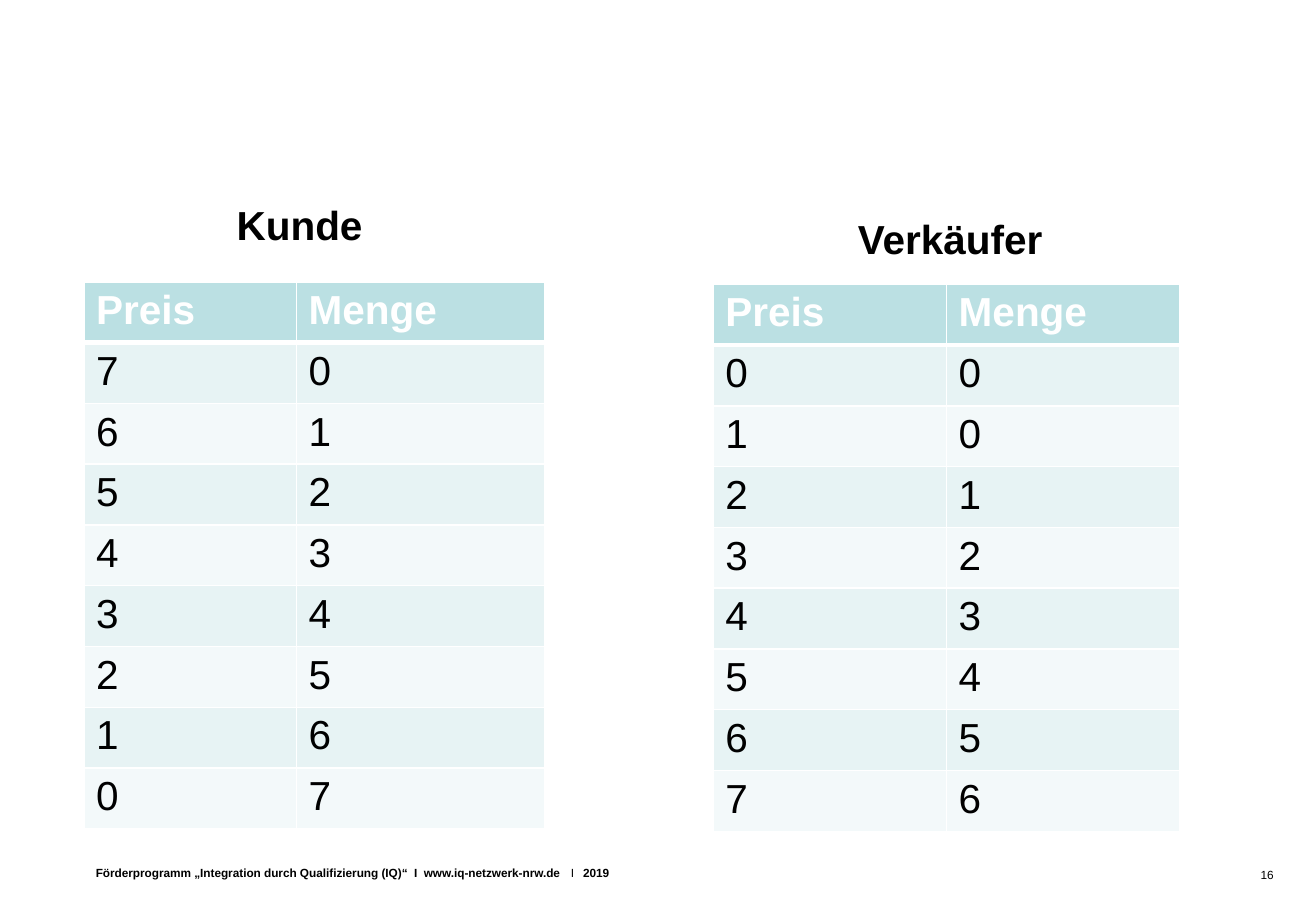
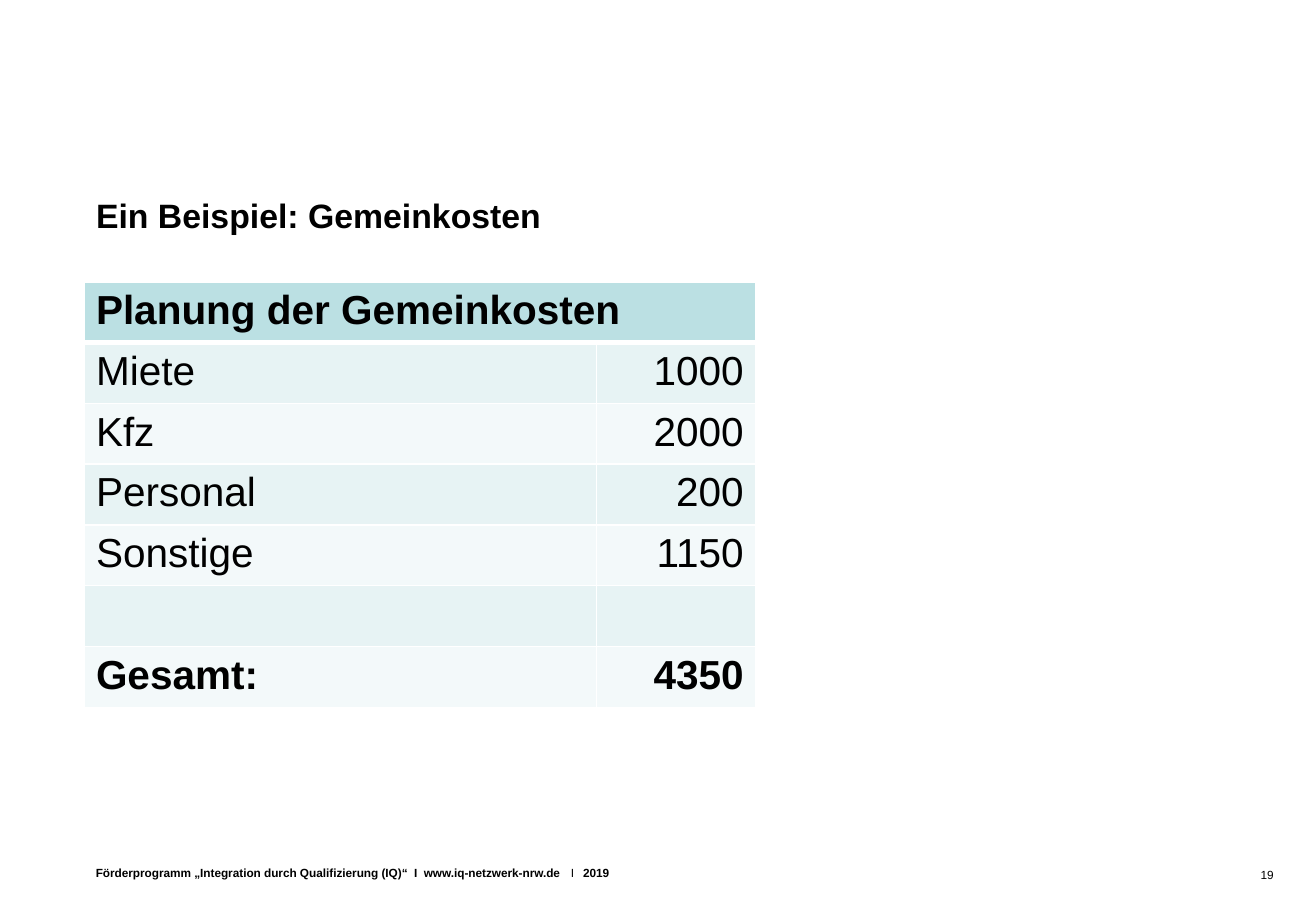
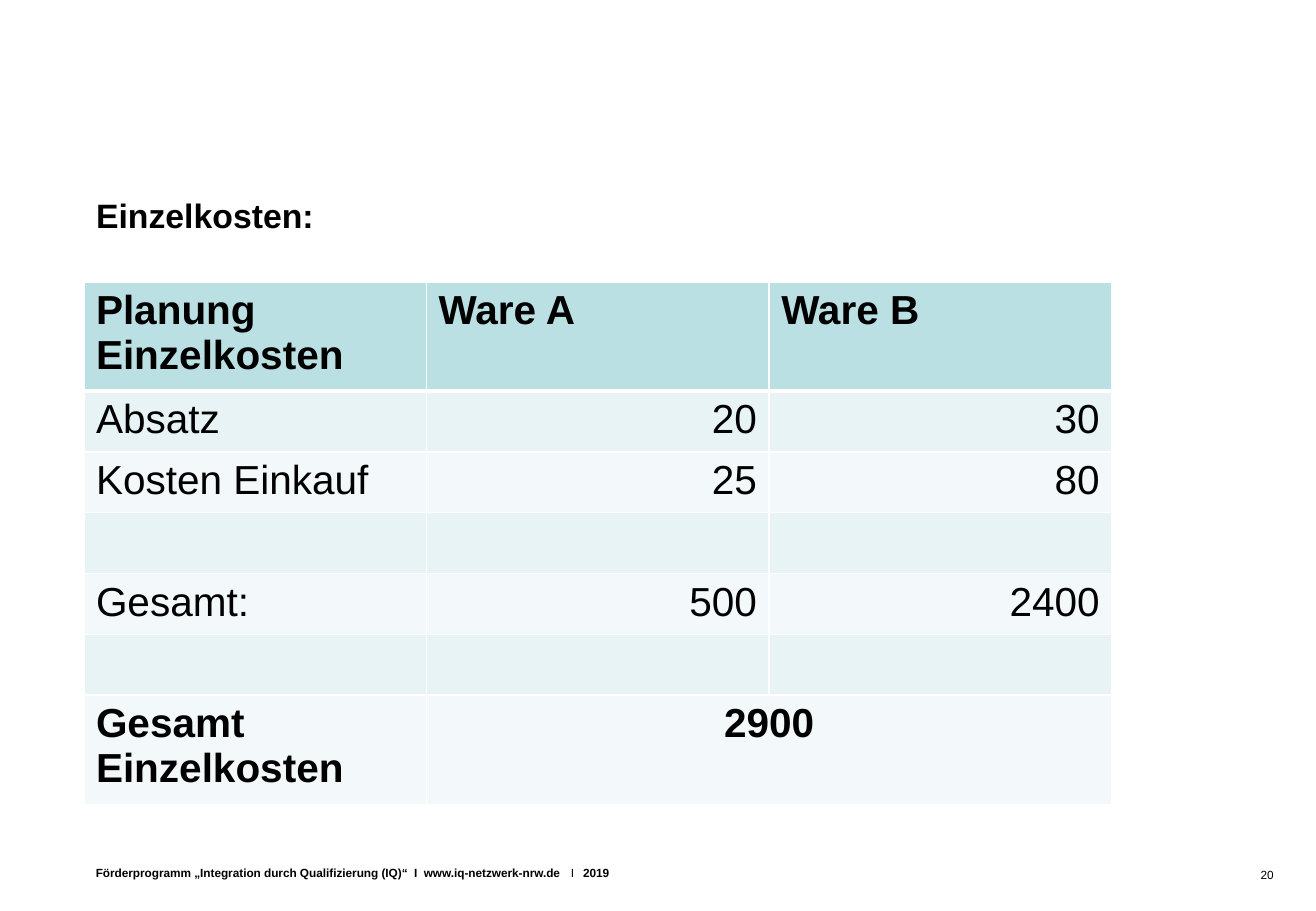
from lxml.etree import SubElement
from pptx import Presentation
from pptx.dml.color import RGBColor
from pptx.enum.text import MSO_ANCHOR as Anchor, MSO_AUTO_SIZE as AutoSize, PP_ALIGN as Align
from pptx.oxml.ns import qn
from pptx.util import Inches, Pt

# Shared style
COLORS = {"text": "000000", "white": "FFFFFF", "header": "BBE0E3",
          "band_dark": "E7F3F4", "band_light": "F3F9FA"}
FONT = "Arial"
MARGIN, TABLE_TOP = 0.69, 2.32
ROW, TALL_ROW = 0.5, 0.9
TITLE_ONLY, BLANK = 5, 6
FOOTER = [("Förderprogramm „Integration durch Qualifizierung (IQ)“\tI\twww.iq-netzwerk-nrw.de", True),
          ("\tI", False), ("\t2019", True)]
FOOTER_TABS = (2.62, 2.7, 3.91, 4.01)


def rgb(name):
    return RGBColor.from_string(COLORS[name])


def add_run(paragraph, text, size, bold=False, color="text"):
    run = paragraph.add_run()
    run.text = text
    font = run.font
    font.name, font.size, font.bold = FONT, Pt(size), bold
    font.color.rgb = rgb(color)


def add_text(slide, box, runs, size, align=Align.LEFT, anchor=Anchor.TOP):
    """Add a one-paragraph text box; runs are (text, bold) pairs."""
    label = slide.shapes.add_textbox(*map(Inches, box))
    frame = label.text_frame
    frame.word_wrap, frame.vertical_anchor = True, anchor
    paragraph = frame.paragraphs[0]
    paragraph.alignment = align
    for text, bold in runs:
        add_run(paragraph, text, size, bold)
    return label


def add_heading(slide, box, text):
    add_text(slide, box, [(text, True)], 24, Align.CENTER)


def add_footer(master, slide):
    """Build the footer line and hand it to the master that all slides share."""
    footer = add_text(slide, (MARGIN, 7.08, 7.47, 0.22), FOOTER, 7)
    properties = footer.text_frame.paragraphs[0]._p.get_or_add_pPr()
    tabs = SubElement(properties, qn("a:tabLst"))
    for stop in FOOTER_TABS:
        SubElement(tabs, qn("a:tab"), pos=str(Inches(stop)), algn="l")
    master.shapes.element.append(footer.element)


def add_slide(prs, number, title=None):
    slide = prs.slides.add_slide(prs.slide_layouts[TITLE_ONLY if title else BLANK])
    if title:
        heading = slide.shapes.title
        heading.left, heading.top = Inches(MARGIN), Inches(1.55)
        heading.width, heading.height = Inches(8.45), Inches(0.61)
        frame = heading.text_frame
        frame.vertical_anchor, frame.auto_size = Anchor.TOP, AutoSize.NONE
        frame.paragraphs[0].alignment = Align.LEFT
        add_run(frame.paragraphs[0], title, 20, True)
    add_text(slide, (8.05, 7, 2.53, 0.4), [(str(number), False)], 7, Align.RIGHT, Anchor.MIDDLE)
    return slide


def set_borders(cell, row):
    """White rules, with a thicker one between header and body."""
    widths = {"L": 1, "R": 1, "T": 3 if row == 1 else 1, "B": 3 if row == 0 else 1}
    properties = cell._tc.get_or_add_tcPr()
    for side, width in widths.items():
        line = SubElement(properties, qn(f"a:ln{side}"), w=str(Pt(width)))
        fill = SubElement(line, qn("a:solidFill"))
        SubElement(fill, qn("a:srgbClr"), val=COLORS["white"])


def add_table(slide, left, top, widths, rows, header_color="text",
              value_align=Align.RIGHT, bold_total=False, tall_rows=()):
    """Add a banded table; values after the first column take value_align."""
    heights = [TALL_ROW if r in tall_rows else ROW for r in range(len(rows))]
    table = slide.shapes.add_table(len(rows), len(widths), Inches(left), Inches(top),
                                   Inches(sum(widths)), Inches(sum(heights))).table
    table.first_row = table.horz_banding = False
    for column, width in zip(table.columns, widths):
        column.width = Inches(width)
    last = len(rows) - 1
    for r, values in enumerate(rows):
        table.rows[r].height = Inches(heights[r])
        band = "header" if r == 0 else "band_dark" if r % 2 else "band_light"
        for c, value in enumerate(values):
            cell = table.cell(r, c)
            set_borders(cell, r)
            cell.fill.solid()
            cell.fill.fore_color.rgb = rgb(band)
            if value:
                paragraph = cell.text_frame.paragraphs[0]
                paragraph.alignment = value_align if r and c else Align.LEFT
                add_run(paragraph, value, 24, r == 0 or (bold_total and r == last),
                        "text" if r else header_color)
    return table


def add_price_table(slide, left, top, widths, prices, quantities):
    rows = [("Preis", "Menge")] + [(str(p), str(q)) for p, q in zip(prices, quantities)]
    add_table(slide, left, top, widths, rows, "white", Align.LEFT)


def main():
    prs = Presentation()
    prs.slide_width, prs.slide_height = Inches(10.83), Inches(7.5)

    # Demand and supply
    market = add_slide(prs, 16)
    add_footer(prs.slide_master, market)
    add_price_table(market, MARGIN, TABLE_TOP, (1.75, 2.04), range(7, -1, -1), range(8))
    add_price_table(market, 5.87, 2.34, (1.92, 1.92), range(8), [0, *range(7)])
    add_heading(market, (0.34, 1.6, 4.25, 0.5), "Kunde")
    add_heading(market, (5.9, 1.71, 3.84, 0.5), "Verkäufer")

    # Overhead costs
    overhead = add_slide(prs, 19, "Ein Beispiel: Gemeinkosten")
    overhead_plan = add_table(overhead, MARGIN, TABLE_TOP, (4.22, 1.31), [
        ("Planung der Gemeinkosten", ""),
        ("Miete", "1000"),
        ("Kfz", "2000"),
        ("Personal", "200"),
        ("Sonstige", "1150"),
        ("", ""),
        ("Gesamt:", "4350"),
    ], bold_total=True)
    overhead_plan.cell(0, 0).merge(overhead_plan.cell(0, 1))

    # Direct costs
    direct = add_slide(prs, 20, "Einzelkosten:")
    direct_plan = add_table(direct, MARGIN, TABLE_TOP, (2.82,) * 3, [
        ("Planung Einzelkosten", "Ware A", "Ware B"),
        ("Absatz", "20", "30"),
        ("Kosten Einkauf", "25", "80"),
        ("", "", ""),
        ("Gesamt:", "500", "2400"),
        ("", "", ""),
        ("Gesamt Einzelkosten", "2900", ""),
    ], bold_total=True, tall_rows=(0, 6))
    total = direct_plan.cell(6, 1)
    total.merge(direct_plan.cell(6, 2))
    total.text_frame.paragraphs[0].alignment = Align.CENTER

    prs.save("out.pptx")


if __name__ == "__main__":
    main()
